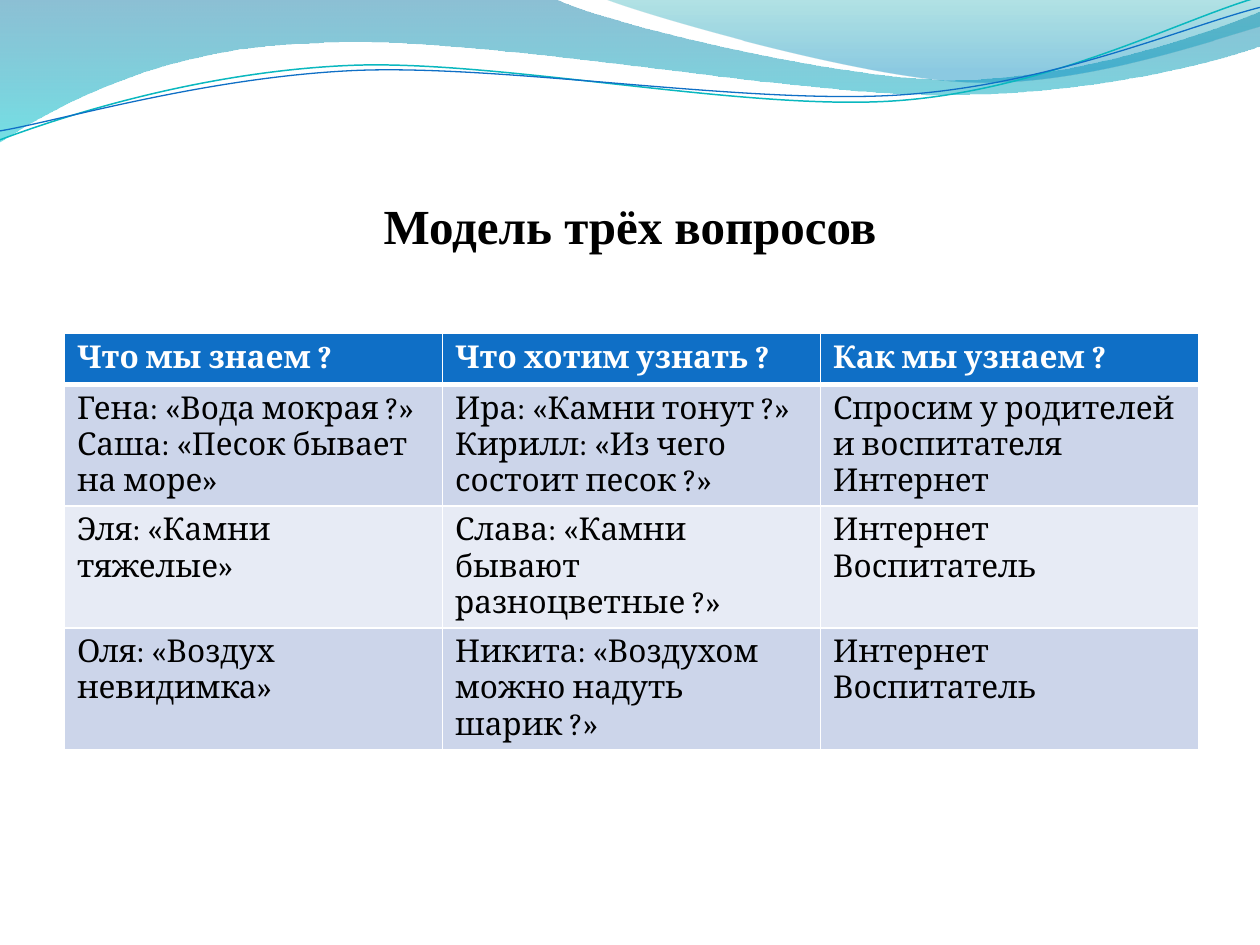
from lxml import etree
from pptx import Presentation
from pptx.dml.color import RGBColor
from pptx.enum.text import MSO_ANCHOR, PP_ALIGN
from pptx.oxml.ns import qn
from pptx.util import Cm, Pt

CENTER, LEFT = PP_ALIGN.CENTER, PP_ALIGN.LEFT
BOTTOM, TOP = MSO_ANCHOR.BOTTOM, MSO_ANCHOR.TOP

COLORS = {
    "black": "000000", "white": "FFFFFF", "blue": "0F6FC6", "teal": "0AB8BF",
    "band_dark": "CCD5EA", "band_light": "E7EBF5",
    "wave_blue": "0074A1", "wave_cyan": "00C6CF",
    "crest_teal": "00A1A9", "crest_blue": "008BBF",
}

WAVE = [[(0, 0)], [(11.18, -0.03)],
        [(12.09, 0.43), (16.87, 1.6), (19.25, 1.6)],
        [(21.67, 1.6), (24.33, 0.66), (25.4, 0.23)], [(25.43, 0.91)],
        [(24.97, 1.12), (22.1, 1.93), (18.95, 1.91)],
        [(15.8, 1.91), (9.7, 0.71), (6.53, 0.86)],
        [(3.28, 0.91), (1.17, 2.11), (-0.03, 2.87)], [(0, 0)]]
CREST = [[(12.17, -0.03)],
         [(12.93, 0.28), (17.32, 1.57), (19.53, 1.65)],
         [(21.74, 1.75), (24.41, 0.81), (25.4, 0.53)],
         [(25.4, 0)], [(12.17, -0.03)]]
TEAL_LINE = [[(0, 2.82)],
             [(1.22, 2.36), (4.01, 1.45), (7.04, 1.32)],
             [(10.03, 1.19), (15.06, 2.26), (18.11, 2.03)],
             [(21.16, 1.8), (23.83, 0.38), (25.35, -0.05)]]
BLUE_LINE = [[(0, 2.64)],
             [(1.19, 2.44), (4.17, 1.55), (7.19, 1.42)],
             [(10.24, 1.3), (15.16, 2.13), (18.21, 1.91)],
             [(21.23, 1.7), (23.9, 0.53), (25.4, 0.15)]]

QUESTIONS = [
    ["Что мы знаем ?", "Что хотим узнать ?", "Как мы узнаем ?"],
    ["Гена: «Вода мокрая ?»\nСаша: «Песок бывает на море»",
     "Ира: «Камни тонут ?»\nКирилл: «Из чего состоит песок ?»",
     "Спросим у родителей и воспитателя\nИнтернет"],
    ["Эля: «Камни тяжелые»", "Слава: «Камни бывают разноцветные ?»",
     "Интернет\nВоспитатель"],
    ["Оля: «Воздух невидимка»", "Никита: «Воздухом можно надуть шарик ?»",
     "Интернет\nВоспитатель"],
]


def rgb(name):
    """Return the named colour."""
    return RGBColor.from_string(COLORS[name])


def write_text(frame, text, font="Cambria", size=18, color="black", bold=False,
               align=LEFT, anchor=TOP):
    """Fill a text frame, one paragraph for each line of text."""
    frame.word_wrap = True
    frame.vertical_anchor = anchor
    frame.text = text
    for paragraph in frame.paragraphs:
        paragraph.alignment = align
        for run in paragraph.runs:
            run.font.name, run.font.size = font, Pt(size)
            run.font.bold, run.font.color.rgb = bold, rgb(color)


def bend_curves(outline, segments):
    """Join the three straight steps of each curved segment into one Bézier."""
    steps = iter(list(outline.element.spPr.iter(qn("a:lnTo"))))
    for segment in segments[1:]:
        first, *others = [next(steps) for _ in segment]
        if others:
            first.tag = qn("a:cubicBezTo")
        for step in others:
            first.append(step[0])
            step.getparent().remove(step)


def add_outline(slide, segments, left, top, closed):
    """Draw a freeform from segments placed relative to left and top."""
    start, *rest = [(left + Cm(x), top + Cm(y))
                    for segment in segments for x, y in segment]
    builder = slide.shapes.build_freeform(*start)
    builder.add_line_segments(rest, close=closed)
    outline = builder.convert_to_shape()
    outline.shadow.inherit = False
    bend_curves(outline, segments)
    return outline


def add_band(slide, segments, left, top, stops):
    """Draw a wave filled from top to bottom with see-through colours."""
    band = add_outline(slide, segments, left, top, True)
    band.line.fill.background()
    band.fill.gradient()
    band.fill.gradient_angle = 270
    for stop, (position, color, _) in zip(band.fill.gradient_stops, stops):
        stop.position, stop.color.rgb = position, rgb(color)
    stop_colors = band.element.spPr.iter(qn("a:srgbClr"))
    for stop_color, (_, _, opacity) in zip(list(stop_colors), stops):
        etree.SubElement(stop_color, qn("a:alpha"), val=str(opacity * 1000))


def add_waves(slide, left, top):
    """Draw the wave decoration at the head of the slide."""
    add_band(slide, WAVE, left, top, [(0, "wave_blue", 45), (1, "wave_cyan", 55)])
    add_band(slide, CREST, left, top, [(0, "crest_teal", 30), (0.8, "crest_blue", 45)])
    for segments, color, width in ((TEAL_LINE, "teal", 0.85), (BLUE_LINE, "blue", 0.75)):
        ripple = add_outline(slide, segments, left, top, False)
        ripple.fill.background()
        ripple.line.color.rgb, ripple.line.width = rgb(color), Pt(width)


def add_title(slide, left, top, width, height):
    """Place and format the title."""
    title = slide.shapes.title
    title.left, title.top, title.width, title.height = left, top, width, height
    frame = title.text_frame
    frame.margin_left = frame.margin_right = frame.margin_bottom = 0
    frame.margin_top = Cm(0.13)
    write_text(frame, "Модель трёх вопросов", font="Times New Roman", size=28,
               bold=True, align=CENTER, anchor=BOTTOM)


def set_borders(cell, bottom):
    """Give a cell white borders with its own bottom width in points."""
    properties = cell._tc.get_or_add_tcPr()
    for side, width in (("L", 1), ("R", 1), ("T", 1), ("B", bottom)):
        border = etree.SubElement(properties, qn(f"a:ln{side}"), w=str(Pt(width)))
        fill = etree.SubElement(border, qn("a:solidFill"))
        etree.SubElement(fill, qn("a:srgbClr"), val=COLORS["white"])


def add_questions(slide, left, top, width, row_height):
    """Build the table of three questions."""
    table = slide.shapes.add_table(len(QUESTIONS), len(QUESTIONS[0]), left, top,
                                   width, row_height * len(QUESTIONS)).table
    for row, answers in enumerate(QUESTIONS):
        header = row == 0
        band = "blue" if header else "band_dark" if row % 2 else "band_light"
        for column, answer in enumerate(answers):
            cell = table.cell(row, column)
            set_borders(cell, 3 if header else 1)
            cell.fill.solid()
            cell.fill.fore_color.rgb = rgb(band)
            write_text(cell.text_frame, answer, bold=header,
                       color="white" if header else "black")


def main():
    """Build and save the slide."""
    deck = Presentation()
    deck.slide_width, deck.slide_height = Cm(25.4), Cm(19.05)
    slide = deck.slides.add_slide(deck.slide_layouts[5])
    add_waves(slide, Cm(0), Cm(0))
    add_title(slide, Cm(1.27), Cm(1.95), Cm(22.86), Cm(3.18))
    add_questions(slide, Cm(1.3), Cm(6.72), Cm(22.86), Cm(1.03))
    deck.save("out.pptx")


if __name__ == "__main__":
    main()
